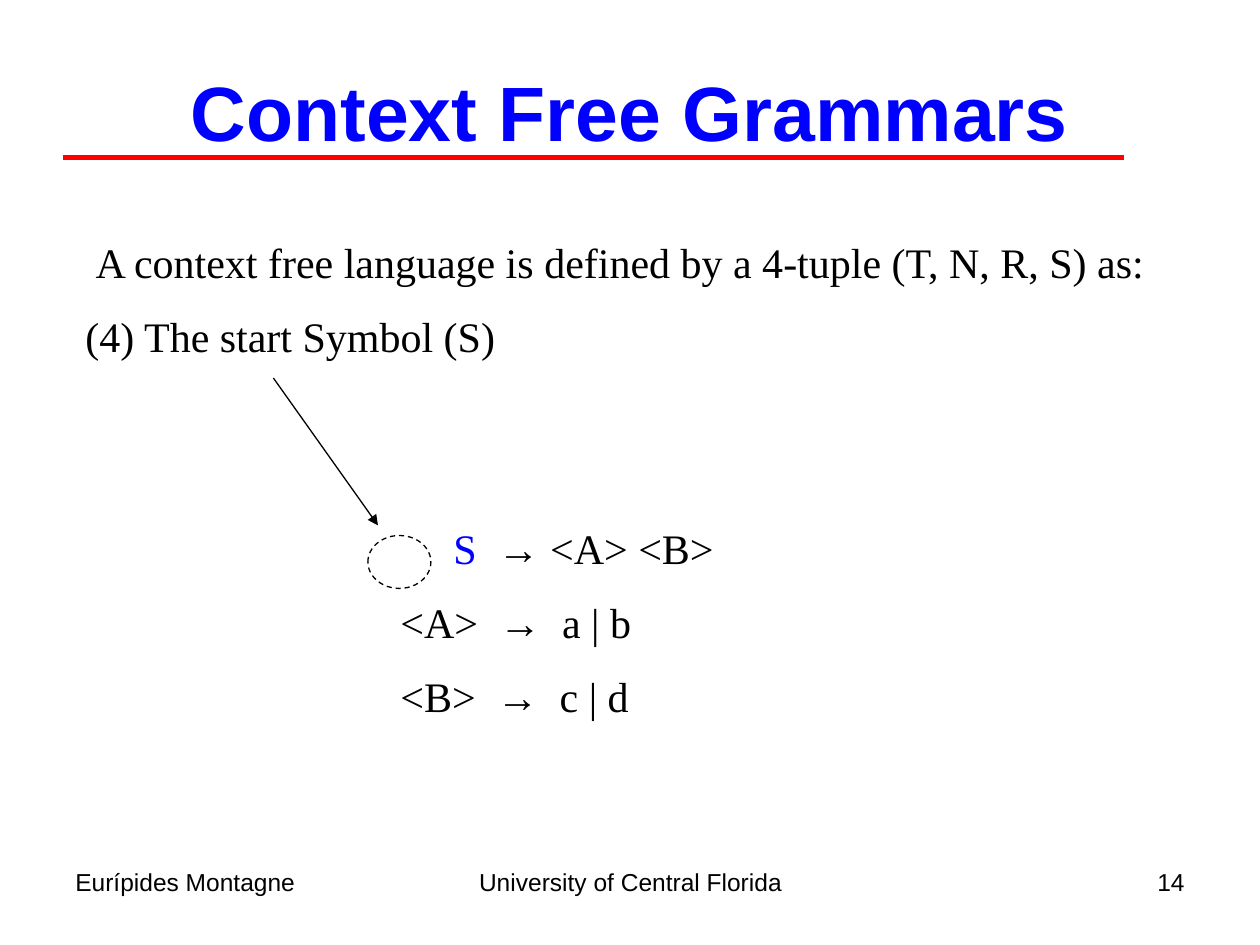
import pptx
import pptx.util
import pptx.dml.color
import pptx.enum.dml
import pptx.enum.shapes
import pptx.enum.text
import pptx.oxml.ns
import lxml.etree
from pptx.util import Inches

COLORS = {"blue": "0000FF", "red": "FF0000", "black": "000000"}
SANS, SERIF = "Arial", "Times New Roman"
ALIGN = pptx.enum.text.PP_ALIGN


def rgb(name):
    return pptx.dml.color.RGBColor.from_string(COLORS[name])


class SlideBuilder:
    def __init__(self, slide):
        self.slide = slide
        self.body_size = 24
        self.body_gap = 13.3
        self.thin = 0.75

    def text_box(self, left, top, width, height):
        box = self.slide.shapes.add_textbox(
            Inches(left), Inches(top), Inches(width), Inches(height))
        box.text_frame.word_wrap = True
        return box.text_frame

    def label(self, text, place, size, color="black", align=ALIGN.LEFT, bold=False):
        frame = self.text_box(*place)
        paragraph = frame.paragraphs[0]
        paragraph.text = text
        paragraph.alignment = align
        self.style(paragraph.font, SANS, size, bold)
        paragraph.font.color.rgb = rgb(color)
        return frame

    def style(self, font, name, size, bold=False):
        font.name = name
        font.size = pptx.util.Pt(size)
        font.bold = bold

    def body(self, place, rows):
        frame = self.text_box(*place)
        for number, (indent, parts) in enumerate(rows):
            paragraph = frame.add_paragraph() if number else frame.paragraphs[0]
            if number:
                paragraph.space_before = pptx.util.Pt(self.body_gap)
            paragraph._p.get_or_add_pPr().set("marL", str(Inches(indent)))
            self.style(paragraph.font, SERIF, self.body_size)
            for text, color in parts:
                run = paragraph.add_run()
                run.text = text
                run.font.color.rgb = rgb(color)

    def line(self, start, end, color, width, arrow=False):
        connector = self.slide.shapes.add_connector(
            pptx.enum.shapes.MSO_CONNECTOR.STRAIGHT,
            *(Inches(value) for value in start + end))
        connector.line.color.rgb = rgb(color)
        connector.line.width = pptx.util.Pt(width)
        qn = pptx.oxml.ns.qn
        if arrow:
            tail = lxml.etree.SubElement(connector.line._get_or_add_ln(), qn("a:tailEnd"))
            tail.set("type", "triangle")
        lxml.etree.SubElement(connector._element.spPr, qn("a:effectLst"))

    def dashed_ellipse(self, left, top, width, height):
        ellipse = self.slide.shapes.add_shape(
            pptx.enum.shapes.MSO_SHAPE.OVAL,
            Inches(left), Inches(top), Inches(width), Inches(height))
        ellipse.shadow.inherit = False
        ellipse.fill.background()
        ellipse.line.color.rgb = rgb("black")
        ellipse.line.width = pptx.util.Pt(self.thin)
        ellipse.line.dash_style = pptx.enum.dml.MSO_LINE.DASH


def main():
    deck = pptx.Presentation()
    deck.slide_width, deck.slide_height = Inches(10), Inches(7.5)
    builder = SlideBuilder(deck.slides.add_slide(deck.slide_layouts[6]))

    for text, left, width, align in (
        ("Eurípides Montagne", 0.5, 2.33, ALIGN.LEFT),
        ("University of Central Florida", 3.42, 3.17, ALIGN.CENTER),
        ("14", 7.17, 2.33, ALIGN.RIGHT),
    ):
        builder.label(text, (left, 6.83, width, 0.52), 14, align=align)

    title = builder.label("Context Free Grammars", (0.5, 0.25, 9, 1.25), 44,
                          "blue", ALIGN.CENTER, True)
    title.vertical_anchor = pptx.enum.text.MSO_ANCHOR.MIDDLE

    builder.body((0.58, 1.83, 9.42, 1.1), [
        (0.08, [("A context free language is defined by a 4-tuple (T, N, R, S) as:", "black")]),
        (0, [("(4) The start Symbol (S)", "black")]),
    ])
    builder.body((3.08, 4.1, 4, 1.7), [
        (0.42, [("S  ", "blue"), ("→ <A> <B>", "black")]),
        (0, [("<A>  →  a | b", "black")]),
        (0, [("<B>  →  c | d", "black")]),
    ])

    builder.line((0.5, 1.25), (8.92, 1.25), "red", 3)
    builder.line((2.17, 3), (3, 4.17), "black", builder.thin, arrow=True)
    builder.dashed_ellipse(2.92, 4.25, 0.5, 0.42)

    deck.save("out.pptx")


if __name__ == "__main__":
    main()
